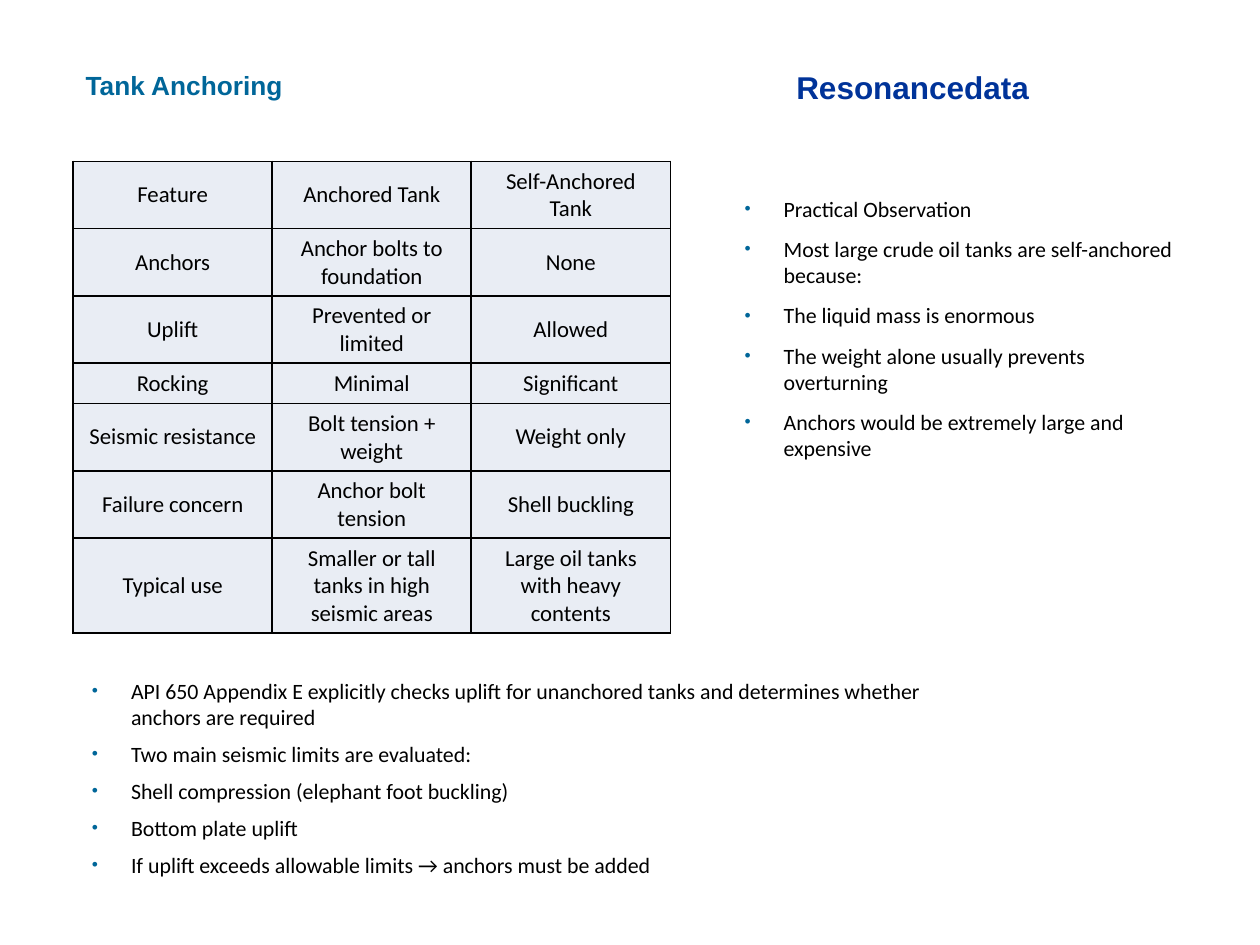
from lxml.etree import SubElement
from pptx import Presentation
from pptx.dml.color import RGBColor
from pptx.enum.text import MSO_ANCHOR, MSO_AUTO_SIZE, PP_ALIGN
from pptx.oxml import parse_xml
from pptx.oxml.ns import nsdecls, qn
from pptx.util import Inches, Pt

BLACK = RGBColor(0x00, 0x00, 0x00)
TEAL = RGBColor(0x00, 0x66, 0x99)
NAVY = RGBColor(0x00, 0x33, 0x99)
PALE = RGBColor(0xE9, 0xED, 0xF4)


def add_span(para, text, font, size, color, bold=False):
    span = para.add_run()
    span.text = text
    span.font.name = font
    span.font.size = Pt(size)
    span.font.color.rgb = color
    span.font.bold = bold


def fill_list(box, items, gap):
    """Write the items as bulleted paragraphs, with gap points on both sides."""
    frame = box.text_frame
    frame.auto_size = MSO_AUTO_SIZE.SHAPE_TO_FIT_TEXT
    for index, item in enumerate(items):
        para = frame.add_paragraph() if index else frame.paragraphs[0]
        para.space_before = Pt(gap if index else 0)
        para.space_after = Pt(gap)
        props = para._p.get_or_add_pPr()
        props.set("marL", str(Inches(0.31)))
        props.set("indent", str(-Inches(0.31)))
        bullet_color = SubElement(props, qn("a:buClr"))
        SubElement(bullet_color, qn("a:srgbClr"), val=str(TEAL))
        SubElement(props, qn("a:buSzPct"), val="80000")
        SubElement(props, qn("a:buFont"), typeface="Arial")
        SubElement(props, qn("a:buChar"), char="•")
        add_span(para, item, "Calibri", 12.5, BLACK)


deck = Presentation()
deck.slide_width, deck.slide_height = Inches(10), Inches(7.5)
page = deck.slides.add_slide(deck.slide_layouts[3])
title, observations, limits = page.placeholders

# Headings
title.left, title.top = Inches(0.58), Inches(0.5)
title.width, title.height = Inches(4.25), Inches(0.35)
title.text_frame.vertical_anchor = MSO_ANCHOR.TOP
title.text_frame.auto_size = MSO_AUTO_SIZE.SHAPE_TO_FIT_TEXT
para = title.text_frame.paragraphs[0]
para.alignment = PP_ALIGN.LEFT
para.space_after = Pt(1.5)
add_span(para, "Tank Anchoring", "Arial", 15, TEAL, bold=True)

brand = page.shapes.add_textbox(Inches(6.25), Inches(0.5), Inches(2.37), Inches(0.38))
frame = brand.text_frame
frame.word_wrap = True
frame.auto_size = MSO_AUTO_SIZE.SHAPE_TO_FIT_TEXT
frame.margin_left = frame.margin_right = Inches(0.07)
frame.margin_top = frame.margin_bottom = Inches(0.04)
add_span(frame.paragraphs[0], "Resonancedata", "Arial", 18, NAVY, bold=True)

# Comparison table: row height in inches, then the cells
ROWS = [
    (0.53, "Feature", "Anchored Tank", "Self-Anchored Tank"),
    (0.53, "Anchors", "Anchor bolts to foundation", "None"),
    (0.53, "Uplift", "Prevented or limited", "Allowed"),
    (0.32, "Rocking", "Minimal", "Significant"),
    (0.53, "Seismic resistance", "Bolt tension + weight", "Weight only"),
    (0.53, "Failure concern", "Anchor bolt tension", "Shell buckling"),
    (0.75, "Typical use", "Smaller or tall tanks in high seismic areas",
     "Large oil tanks with heavy contents"),
]
table = page.shapes.add_table(
    len(ROWS), 3, Inches(0.58), Inches(1.28), Inches(4.74), Inches(3.72)
).table
table.first_row = table.horz_banding = False
for column in table.columns:
    column.width = Inches(1.58)
for row, (height, *texts) in zip(table.rows, ROWS):
    row.height = Inches(height)
    for cell, text in zip(row.cells, texts):
        cell.vertical_anchor = MSO_ANCHOR.MIDDLE
        para = cell.text_frame.paragraphs[0]
        para.alignment = PP_ALIGN.CENTER
        add_span(para, text, "Calibri", 13, BLACK)
        props = cell._tc.get_or_add_tcPr()
        for side in ("lnL", "lnR", "lnT", "lnB"):
            props.append(parse_xml(
                f'<a:{side} {nsdecls("a")} w="{Pt(1)}"><a:solidFill>'
                f'<a:srgbClr val="{BLACK}"/></a:solidFill></a:{side}>'
            ))
        cell.fill.solid()
        cell.fill.fore_color.rgb = PALE

# Bulleted lists
observations.left, observations.top = Inches(5.81), Inches(1.5)
observations.width, observations.height = Inches(3.61), Inches(2.59)
fill_list(observations, [
    "Practical Observation",
    "Most large crude oil tanks are self-anchored because:",
    "The liquid mass is enormous",
    "The weight alone usually prevents overturning",
    "Anchors would be extremely large and expensive",
], gap=4)

limits.left, limits.top = Inches(0.63), Inches(5.33)
limits.width, limits.height = Inches(6.83), Inches(2.04)
fill_list(limits, [
    "API 650 Appendix E explicitly checks uplift for unanchored tanks "
    "and determines whether anchors are required",
    "Two main seismic limits are evaluated:",
    "Shell compression (elephant foot buckling)",
    "Bottom plate uplift",
    "If uplift exceeds allowable limits → anchors must be added",
], gap=3)

deck.save("out.pptx")
